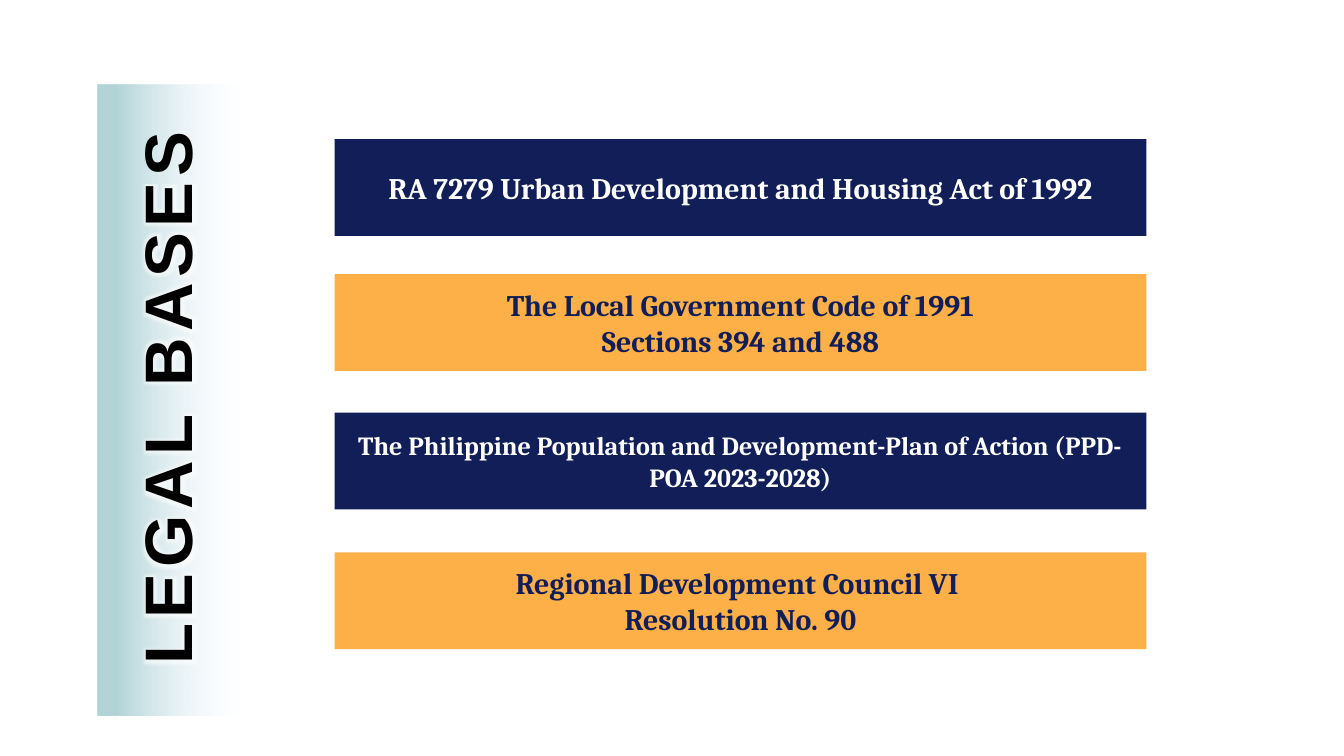
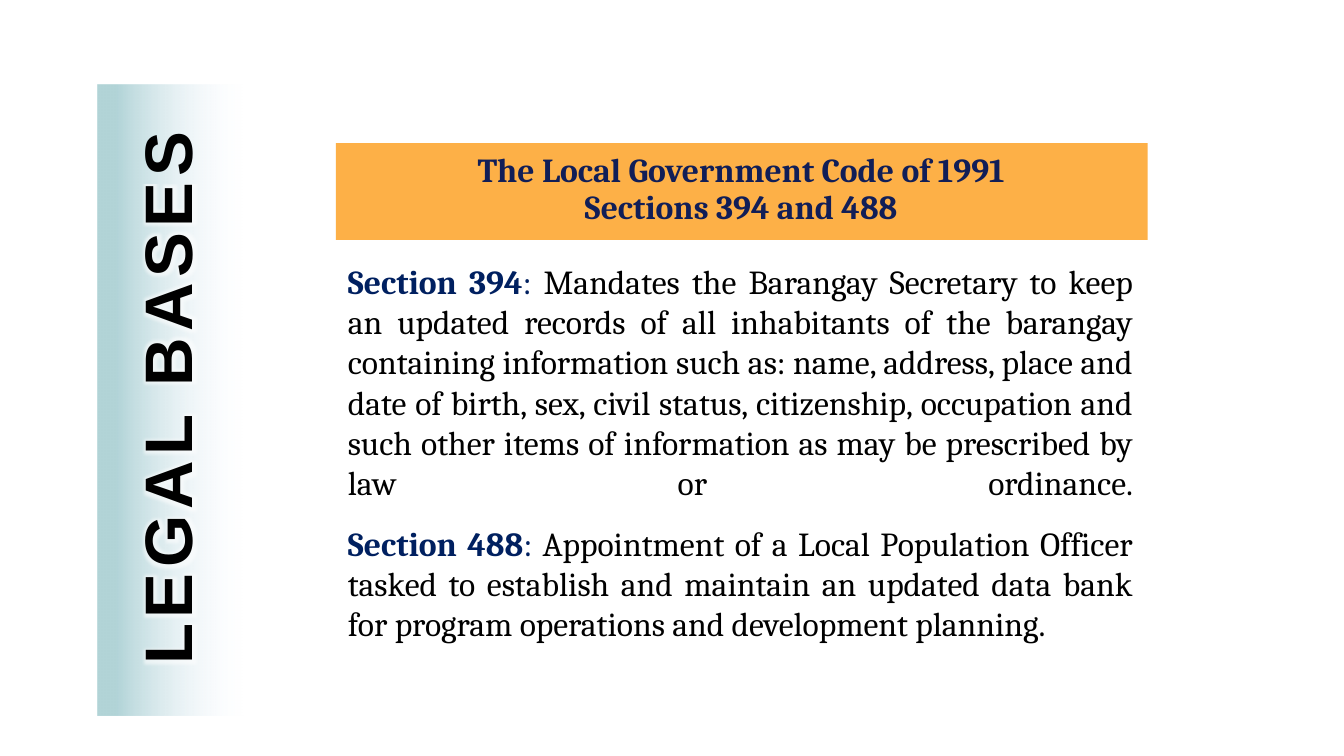
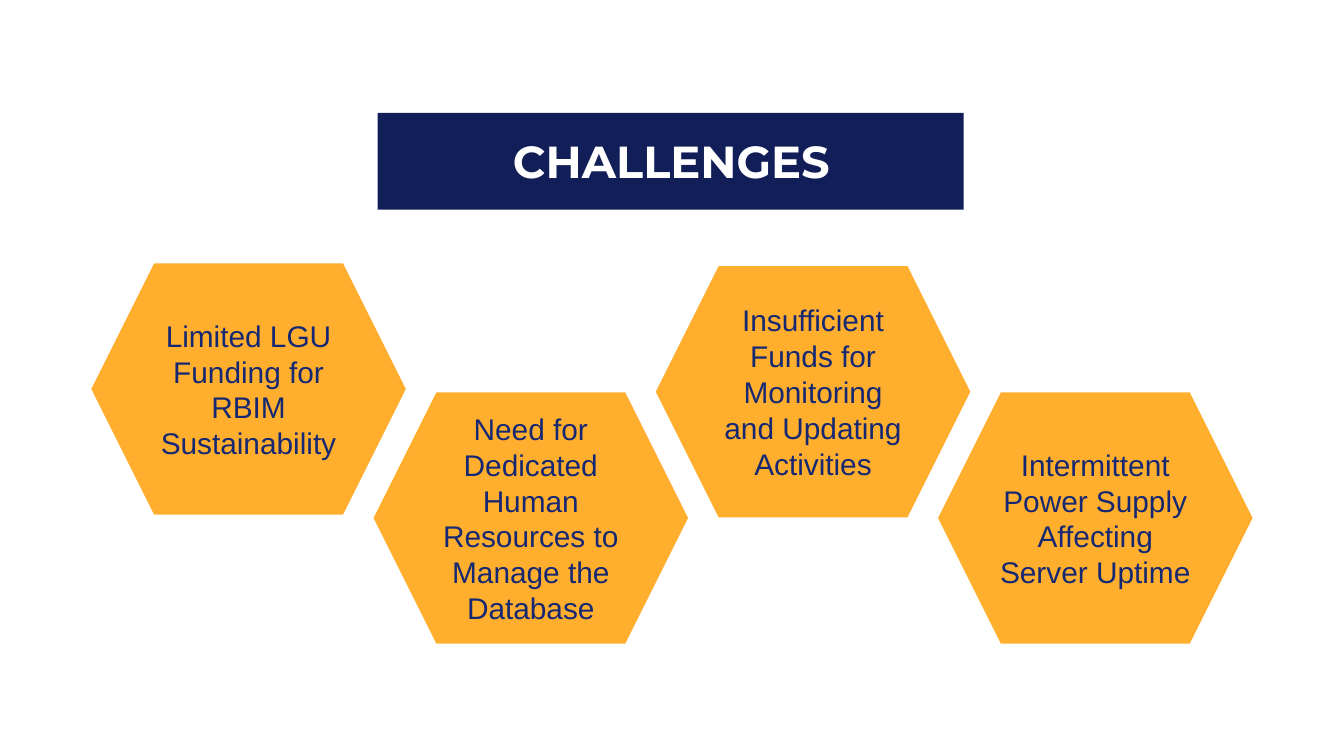
from typing import NamedTuple

from lxml.etree import SubElement
from pptx import Presentation
from pptx.dml.color import RGBColor
from pptx.enum.shapes import MSO_SHAPE
from pptx.enum.text import MSO_ANCHOR, MSO_AUTO_SIZE, PP_ALIGN
from pptx.oxml import parse_xml
from pptx.oxml.ns import nsdecls, qn
from pptx.shapes.autoshape import Shape
from pptx.slide import Slide
from pptx.util import Inches, Pt

WIDTH = Inches(10)
HEIGHT = WIDTH * 9 // 16
CELL = WIDTH // 100  # square grid cell: 100 columns across the slide

NAVY, AMBER, ORANGE = "111E57", "FDB047", "FFAF2D"
LABEL_NAVY, HEXAGON_NAVY = "002060", "162872"
WHITE, BLACK = "FFFFFF", "000000"
TEAL, PALE_BLUE = "00717D", "E2E8FF"
SERIF, SANS, DISPLAY = "Cambria", "Arial", "Montserrat"

BAND_HEIGHT = 7.2
BAND_COLUMN, BAND_WIDTH = 24.9, 60.4
HEXAGON_COLUMN, HEXAGON_STEP = 6.8, 21
HEXAGON_WIDTH, HEXAGON_HEIGHT = 23.4, 18.7


class Area(NamedTuple):
    """A rectangle in grid columns and rows."""
    column: float
    row: float
    columns: float
    rows: float

    def lengths(self) -> list[int]:
        return [round(cells * CELL) for cells in self]


class Band(NamedTuple):
    row: float
    text: str
    fill: str
    color: str
    size: int = 16


class Section(NamedTuple):
    label: str
    text: str
    area: Area
    ends_with_break: bool = False


class Challenge(NamedTuple):
    row: float
    text: str


CODE_TITLE = "The Local Government Code of 1991\nSections 394 and 488"
BANDS = [
    Band(10.35, "RA 7279 Urban Development and Housing Act of 1992", NAVY, WHITE),
    Band(20.4, CODE_TITLE, AMBER, NAVY),
    Band(30.7, "The Philippine Population and Development-Plan of Action (PPD-POA 2023-2028)",
         NAVY, WHITE, 14),
    Band(41.1, "Regional Development Council VI \nResolution No. 90", AMBER, NAVY),
]
SECTION_394 = Section(
    "Section 394",
    "Mandates the Barangay Secretary to keep an updated records of all inhabitants "
    "of the barangay containing information such as: name, address, place and date "
    "of birth, sex, civil status, citizenship, occupation and such other items of "
    "information as may be prescribed by law or ordinance.",
    Area(BAND_COLUMN, 18.9, BAND_WIDTH, 22.2), ends_with_break=True)
SECTION_488 = Section(
    "Section 488",
    "Appointment of a Local Population Officer tasked to establish and maintain an "
    "updated data bank for program operations and development planning.",
    Area(BAND_COLUMN, 38.4, BAND_WIDTH, 13.1))
CHALLENGES = [
    Challenge(19.6, "Limited LGU Funding for RBIM Sustainability"),
    Challenge(29.2, "Need for Dedicated Human Resources to Manage the Database"),
    Challenge(19.8, "Insufficient Funds for Monitoring and Updating Activities"),
    Challenge(29.2, "Intermittent Power Supply Affecting Server Uptime"),
]


def rgb(color: str) -> RGBColor:
    return RGBColor.from_string(color)


def write(para, text: str, *, font: str, size: float, color: str,
          bold: bool = False, tracking: float = 0, glow: str = ""):
    """Add one formatted span to a paragraph."""
    span = para.add_run()
    span.text = text
    span.font.name, span.font.size, span.font.bold = font, Pt(size), bold
    span.font.color.rgb = rgb(color)
    properties = span.font._element
    if tracking:
        properties.set("spc", str(round(tracking * 100)))
    if glow:
        properties.find(qn("a:solidFill")).addnext(parse_xml(
            f'<a:effectLst {nsdecls("a")}><a:glow rad="101600"><a:srgbClr val="{glow}">'
            '<a:alpha val="60000"/></a:srgbClr></a:glow></a:effectLst>'))


def write_lines(shape: Shape, text: str, *, line_spacing: float | None = None, **style):
    """Write each line of the text as a centred paragraph."""
    frame = shape.text_frame
    for index, line in enumerate(text.split("\n")):
        para = frame.add_paragraph() if index else frame.paragraphs[0]
        para.alignment = PP_ALIGN.CENTER
        if line_spacing:
            para.line_spacing = line_spacing
        write(para, line, **style)


def add_block(page: Slide, area: Area, fill: str, kind=MSO_SHAPE.RECTANGLE) -> Shape:
    block = page.shapes.add_shape(kind, *area.lengths())
    block.shadow.inherit = False
    block.line.fill.background()
    block.fill.solid()
    block.fill.fore_color.rgb = rgb(fill)
    block.text_frame.vertical_anchor = MSO_ANCHOR.MIDDLE
    return block


def add_box(page: Slide, area: Area, anchor=MSO_ANCHOR.MIDDLE, inset: float = 0.5) -> Shape:
    """Add a wrapping text box; inset is its top and bottom margin in rows."""
    box = page.shapes.add_textbox(*area.lengths())
    frame = box.text_frame
    frame.word_wrap = True
    frame.vertical_anchor = anchor
    frame.margin_top = frame.margin_bottom = round(inset * CELL)
    return box


def add_side_panel(page: Slide):
    """Draw the panel that fades to the right."""
    panel = add_block(page, Area(7.3, 6.3, 10.8, 46.9), TEAL)
    panel.fill.gradient()
    panel.fill.gradient_angle = 0
    fades = [(0.13, TEAL, 30), (1, PALE_BLUE, 0)]
    for stop, (position, color, _) in zip(panel.fill.gradient_stops, fades):
        stop.position = position
        stop.color.rgb = rgb(color)
    tints = list(panel._element.spPr.iter(qn("a:srgbClr")))
    for tint, (_, _, opacity) in zip(tints, fades):
        SubElement(tint, qn("a:alpha")).set("val", str(opacity * 1000))


def add_side_title(page: Slide):
    title = add_box(page, Area(7.3, 8.1, 10.1, 43.1), inset=1)
    title.text_frame._txBody.bodyPr.set("vert", "vert270")
    write_lines(title, "LEGAL BASES", font=SANS, size=36, color=BLACK, bold=True,
                tracking=3, glow=WHITE)


def add_section(page: Slide, section: Section):
    box = add_box(page, section.area, MSO_ANCHOR.TOP)
    box.text_frame.auto_size = MSO_AUTO_SIZE.SHAPE_TO_FIT_TEXT
    para = box.text_frame.paragraphs[0]
    para.alignment = PP_ALIGN.JUSTIFY
    style = {"font": SERIF, "size": 18}
    write(para, section.label, color=LABEL_NAVY, bold=True, **style)
    write(para, ": ", color=LABEL_NAVY, **style)
    write(para, section.text, color=BLACK, **style)
    if section.ends_with_break:
        para.add_line_break()


def build_legal_bases(page: Slide):
    add_side_panel(page)
    for band in BANDS:
        block = add_block(page, Area(BAND_COLUMN, band.row, BAND_WIDTH, BAND_HEIGHT), band.fill)
        write_lines(block, band.text, font=SERIF, size=band.size, color=band.color, bold=True)
    add_side_title(page)


def build_government_code(page: Slide):
    add_side_panel(page)
    add_section(page, SECTION_394)
    add_block(page, Area(25, 10.65, BAND_WIDTH, BAND_HEIGHT), AMBER)
    heading = add_box(page, Area(27.5, 11.75, 55.3, 5.6), MSO_ANCHOR.BOTTOM)
    write_lines(heading, CODE_TITLE, line_spacing=0.9, font=SERIF, size=18, color=NAVY, bold=True)
    add_section(page, SECTION_488)
    add_side_title(page)


def build_challenges(page: Slide):
    add_block(page, Area(28.1, 8.4, 43.6, BAND_HEIGHT), NAVY)
    heading = add_box(page, Area(22.3, 8.35, 55.3, BAND_HEIGHT), inset=1)
    write_lines(heading, "CHALLENGES", font=DISPLAY, size=24, color=WHITE, bold=True)
    for index, challenge in enumerate(CHALLENGES):
        area = Area(HEXAGON_COLUMN + index * HEXAGON_STEP, challenge.row,
                    HEXAGON_WIDTH, HEXAGON_HEIGHT)
        hexagon = add_block(page, area, ORANGE, MSO_SHAPE.HEXAGON)
        write_lines(hexagon, challenge.text, font=SANS, size=16, color=HEXAGON_NAVY)


def main():
    deck = Presentation()
    deck.slide_width, deck.slide_height = WIDTH, HEIGHT
    blank = deck.slide_layouts[6]
    for build in (build_legal_bases, build_government_code, build_challenges):
        build(deck.slides.add_slide(blank))
    deck.save("out.pptx")


if __name__ == "__main__":
    main()
